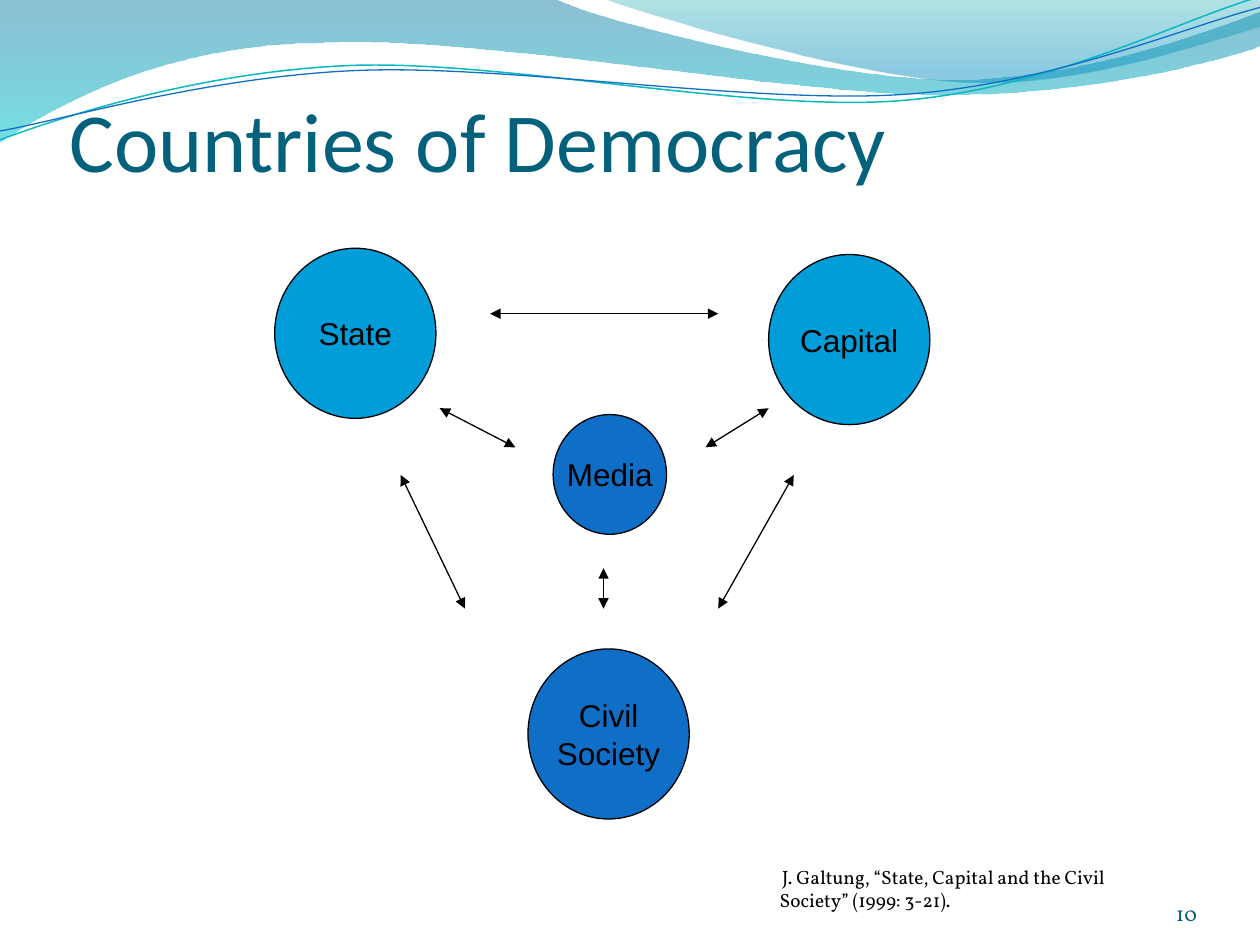
import math
from dataclasses import dataclass

from lxml import etree
from pptx import Presentation
from pptx.dml.color import RGBColor
from pptx.enum import shapes, text
from pptx.oxml import ns
from pptx.util import Inches, Pt


@dataclass(frozen=True)
class Theme:
    """Colours, fonts and type sizes of the slide."""
    ink: str = "000000"
    title: str = "04617B"
    number: str = "045D75"
    power: str = "009DD9"
    public: str = "0F6FC6"
    teal: str = "0AB8BF"
    heading_font: str = "Calibri"
    body_font: str = "Vollkorn"
    label_font: str = "Arial"
    heading_size: float = 48
    label_size: float = 18
    number_size: float = 12
    source_size: float = 11
    outline: float = 0.75
    teal_outline: float = 0.85


THEME = Theme()
STRAND_TILT = 2.7

BACK_WAVE = [
    (0, -0.01), (4.4, -0.01),
    (4.76, 0.17, 6.64, 0.63, 7.58, 0.63), (8.53, 0.63, 9.58, 0.26, 10, 0.09),
    (10.01, 0.36),
    (9.83, 0.44, 8.7, 0.76, 7.46, 0.75), (6.22, 0.75, 3.82, 0.28, 2.57, 0.34),
    (1.29, 0.35, 0.46, 0.83, -0.01, 1.13), (0, -0.01),
]
FRONT_WAVE = [
    (4.79, -0.01),
    (5.09, 0.11, 6.82, 0.62, 7.69, 0.65), (8.56, 0.69, 9.61, 0.32, 10, 0.21),
    (10, 0), (4.79, -0.01),
]
TEAL_STRAND = [
    (0, 1.11),
    (0.48, 0.93, 1.58, 0.57, 2.77, 0.52), (3.95, 0.47, 5.93, 0.89, 7.13, 0.8),
    (8.33, 0.71, 9.38, 0.15, 9.98, -0.02),
]
BLUE_STRAND = [
    (0, 1.04),
    (0.47, 0.96, 1.64, 0.61, 2.83, 0.56), (4.03, 0.51, 5.97, 0.83, 7.17, 0.75),
    (8.36, 0.67, 9.41, 0.21, 10, 0.06),
]
WAVES = [
    (BACK_WAVE, [(0, "0074A1", 45), (1, "00C6CF", 55)]),
    (FRONT_WAVE, [(0, "00A1A9", 30), (0.8, "008BBF", 45)]),
]
STRANDS = [
    (TEAL_STRAND, (4.99, 0.58), THEME.teal, THEME.teal_outline),
    (BLUE_STRAND, (5, 0.59), THEME.public, THEME.outline),
]
ACTORS = [
    (["State"], (2.18, 1.97, 1.28, 1.35), THEME.power),
    (["Capital"], (6.1, 2.02, 1.28, 1.35), THEME.power),
    (["Civil", "Society"], (4.19, 5.15, 1.28, 1.35), THEME.public),
    (["Media"], (4.39, 3.29, 0.9, 0.95), THEME.public),
]
RELATIONS = [
    (3.89, 2.49, 5.7, 2.49), (6.3, 3.77, 5.7, 4.83), (3.18, 3.77, 3.69, 4.83),
    (3.49, 3.24, 4.09, 3.55), (6.1, 3.24, 5.6, 3.55), (4.79, 4.51, 4.79, 4.83),
]


def apply(target, formats):
    """Set every attribute named in a dict of format values."""
    for name, value in formats.items():
        setattr(target, name, value)


def rgb(colour):
    """Turn a hex string into a colour."""
    return RGBColor.from_string(colour)


def add_node(parent, tag, **attributes):
    """Append a drawing element to a parent element."""
    return etree.SubElement(parent, ns.qn(tag), attributes)


def draw_line(line, colour, width):
    """Give a line its colour and width."""
    line.color.rgb = rgb(colour)
    line.width = Pt(width)


def turn(step, centre, degrees):
    """Rotate the points of one path step clockwise about a centre."""
    cos, sin = math.cos(math.radians(degrees)), math.sin(math.radians(degrees))
    turned = []
    for x, y in zip(step[::2], step[1::2]):
        dx, dy = x - centre[0], y - centre[1]
        turned += [centre[0] + dx * cos - dy * sin, centre[1] + dx * sin + dy * cos]
    return turned


def add_outline(canvas, path_steps, close):
    """Build a freeform whose six-number steps are cubic curves."""
    points = [(Inches(x), Inches(y)) for step in path_steps
              for x, y in zip(step[::2], step[1::2])]
    builder = canvas.build_freeform(*points[0])
    builder.add_line_segments(points[1:], close=close)
    outline = builder.convert_to_shape()
    outline.shadow.inherit = False
    segments = iter(list(outline.element.iter(ns.qn("a:lnTo"))))
    for step in path_steps[1:]:
        segment = next(segments)
        if len(step) == 6:
            curve = etree.Element(ns.qn("a:cubicBezTo"))
            segment.addprevious(curve)
            for part in (segment, next(segments), next(segments)):
                curve.append(part[0])
                part.getparent().remove(part)
    return outline


def add_wave(canvas, path_steps, stops):
    """Draw a translucent wave with a downward gradient."""
    wave = add_outline(canvas, path_steps, True)
    wave.line.fill.background()
    wave.fill.gradient()
    wave.fill.gradient_angle = 270
    for stop, (position, colour, _) in zip(wave.fill.gradient_stops, stops):
        stop.position = position
        stop.color.rgb = rgb(colour)
    for node, (_, _, opacity) in zip(wave.element.iter(ns.qn("a:srgbClr")), stops):
        add_node(node, "a:alpha", val=str(opacity * 1000))


def add_strand(canvas, path_steps, centre, colour, width):
    """Draw a thin open curve, tilted as a whole."""
    level = [turn(step, centre, STRAND_TILT) for step in path_steps]
    strand = add_outline(canvas, level, False)
    strand.rotation = -STRAND_TILT
    strand.fill.background()
    draw_line(strand.line, colour, width)


def write(frame, lines, font, size, colour, align):
    """Fill a text frame with one paragraph per line."""
    for i, line in enumerate(lines):
        paragraph = frame.paragraphs[0] if i == 0 else frame.add_paragraph()
        paragraph.alignment = align
        run = paragraph.add_run()
        run.text = line
        apply(run.font, {"name": font, "size": Pt(size)})
        run.font.color.rgb = rgb(colour)


def add_text(canvas, box, line, font, size, colour, formats, align=text.PP_ALIGN.LEFT):
    """Add a wrapped text box and return its paragraph."""
    frame = canvas.add_textbox(*map(Inches, box)).text_frame
    apply(frame, {"word_wrap": True, **formats})
    write(frame, [line], font, size, colour, align)
    return frame.paragraphs[0]


def add_actor(canvas, lines, box, colour):
    """Draw a labelled circle."""
    actor = canvas.add_shape(shapes.MSO_SHAPE.OVAL, *map(Inches, box))
    actor.shadow.inherit = False
    actor.fill.solid()
    actor.fill.fore_color.rgb = rgb(colour)
    draw_line(actor.line, THEME.ink, THEME.outline)
    apply(actor.text_frame, {"word_wrap": False, "vertical_anchor": text.MSO_ANCHOR.MIDDLE})
    write(actor.text_frame, lines, THEME.label_font, THEME.label_size, THEME.ink,
          text.PP_ALIGN.CENTER)


def add_relation(canvas, ends):
    """Draw a two-headed arrow."""
    relation = canvas.add_connector(shapes.MSO_CONNECTOR.STRAIGHT, *map(Inches, ends))
    draw_line(relation.line, THEME.ink, THEME.outline)
    for tag in ("a:headEnd", "a:tailEnd"):
        add_node(relation.line._get_or_add_ln(), tag, type="triangle")
    add_node(relation.element.spPr, "a:effectLst")


def main():
    """Build the slide and save it."""
    deck = Presentation()
    apply(deck, {"slide_width": Inches(10), "slide_height": Inches(7.5)})
    canvas = deck.slides.add_slide(deck.slide_layouts[6]).shapes
    for wave in WAVES:
        add_wave(canvas, *wave)
    strands = canvas.add_group_shape().shapes
    for strand in STRANDS:
        add_strand(strands, *strand)

    flush = {"margin_left": 0, "margin_right": 0, "margin_bottom": 0,
             "vertical_anchor": text.MSO_ANCHOR.BOTTOM}
    add_text(canvas, (8.67, 6.95, 0.83, 0.4), "10", THEME.body_font, THEME.number_size,
             THEME.number, {**flush, "margin_top": 0}, text.PP_ALIGN.RIGHT)
    add_text(canvas, (0.55, 0.31, 8.9, 1.19), "Countries of Democracy", THEME.heading_font,
             THEME.heading_size, THEME.title, {**flush, "margin_top": Inches(0.05)})
    source = add_text(canvas, (5.79, 6.82, 3.56, 0.55),
                      "J. Galtung, “State, Capital and the Civil Society” (1999: 3-21).",
                      THEME.body_font, THEME.source_size, THEME.ink, {})
    layout = source._p.get_or_add_pPr()
    for name, indent in {"marL": 0.3, "indent": 0.02}.items():
        layout.set(name, str(Inches(indent)))
    add_node(add_node(layout, "a:spcBef"), "a:spcPct", val="20000")

    diagram = canvas.add_group_shape().shapes
    for actor in ACTORS:
        add_actor(diagram, *actor)
    for ends in RELATIONS:
        add_relation(diagram, ends)
    deck.save("out.pptx")


if __name__ == "__main__":
    main()
